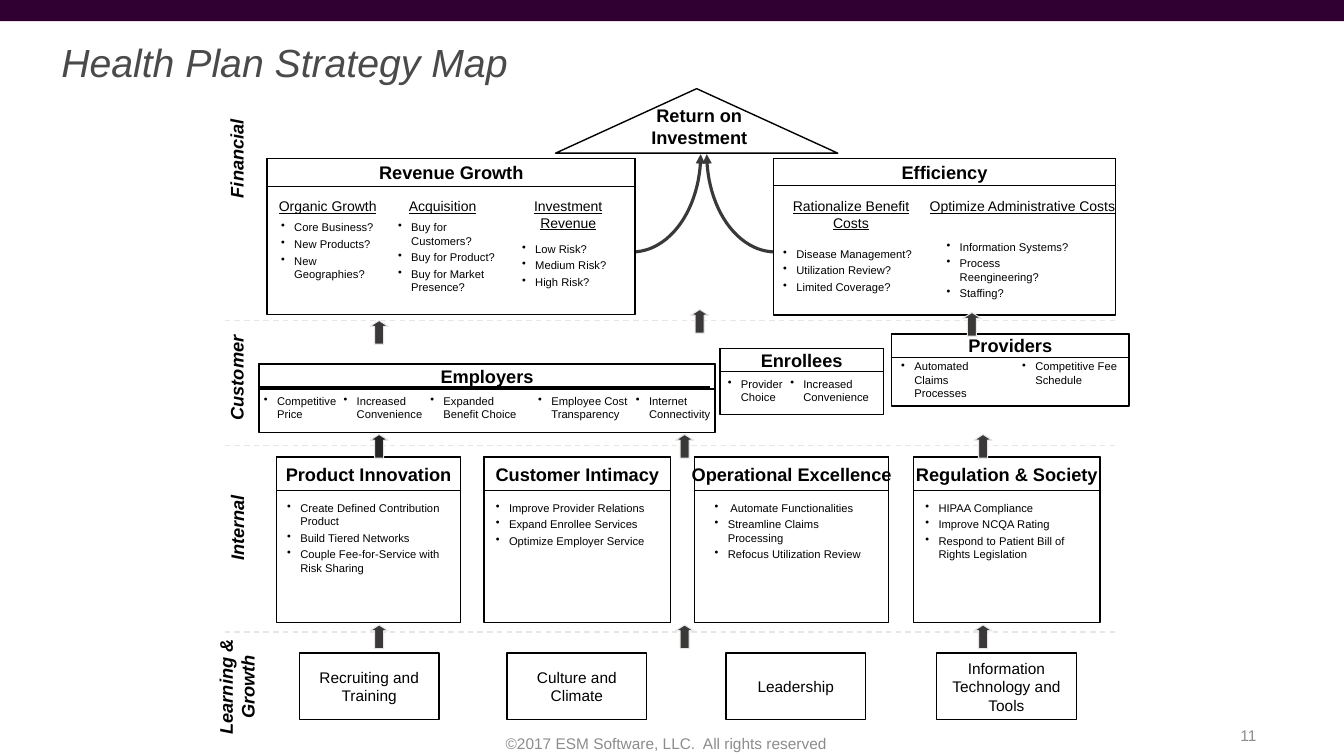
import math

from pptx import Presentation
from pptx import util as u
from pptx.dml.color import RGBColor
from pptx.enum import dml, shapes, text
from pptx.oxml.ns import qn

BLACK = RGBColor(0x00, 0x00, 0x00)
WHITE = RGBColor(0xFF, 0xFF, 0xFF)
PLUM = RGBColor(0x31, 0x00, 0x32)
SLATE = RGBColor(0x4A, 0x4A, 0x4A)
GREY = RGBColor(0x8C, 0x8C, 0x8C)
PALE = RGBColor(0xE7, 0xE6, 0xE6)
CHARCOAL = RGBColor(0x3B, 0x38, 0x38)
INK = RGBColor(0x26, 0x26, 0x26)

CELL = u.Inches(0.1)  # one column and one row of the grid
COLUMNS, ROWS = 133.3, 75
LEFT, CENTER, RIGHT = (text.PP_ALIGN.LEFT, text.PP_ALIGN.CENTER,
                       text.PP_ALIGN.RIGHT)
TOP, MIDDLE = text.MSO_ANCHOR.TOP, text.MSO_ANCHOR.MIDDLE
PRESET = shapes.MSO_SHAPE


def cells(*counts):
    return [u.Emu(round(count * CELL)) for count in counts]


class StrategyMap:
    """Draws on one page; every place is (column, row, width, height) in grid cells."""

    font = "Arial"

    def __init__(self, page):
        self.page = page

    def fill_text(self, frame, lines, size, color=BLACK, align=CENTER, anchor=TOP,
                  inset=(1, 0.5), wrap=True, bullet=False, spacing=None,
                  bold=False, italic=False, underline=False):
        frame.word_wrap = wrap
        frame.vertical_anchor = anchor
        frame.margin_left = frame.margin_right = cells(inset[0])[0]
        frame.margin_top = frame.margin_bottom = cells(inset[1])[0]
        for index, line in enumerate(lines):
            para = frame.add_paragraph() if index else frame.paragraphs[0]
            para.alignment = align
            if spacing:
                para.line_spacing = spacing
            if index:
                para.space_before = u.Pt(2.3)
            if bullet:
                properties = para._p.get_or_add_pPr()
                indent = cells(1.3)[0]
                properties.set("marL", str(indent))
                properties.set("indent", str(-indent))
                mark = properties.makeelement(qn("a:buChar"), {"char": "•"})
                properties.append(mark)
            span = para.add_run()
            span.text = line
            span.font.name, span.font.size = self.font, u.Pt(size)
            span.font.color.rgb = color
            span.font.bold, span.font.italic = bold, italic
            span.font.underline = underline

    def label(self, place, line, size, turn=0, **style):
        box = self.page.shapes.add_textbox(*cells(*place))
        box.rotation = turn
        self.fill_text(box.text_frame, [line], size, **style)

    def bullets(self, place, items):
        box = self.page.shapes.add_textbox(*cells(*place))
        self.fill_text(box.text_frame, items, 8, align=LEFT, bullet=True)

    def shape(self, preset, place, fill=None, line=BLACK, weight=1):
        shape = self.page.shapes.add_shape(preset, *cells(*place))
        self.finish(shape, fill, line, weight)
        return shape

    def finish(self, shape, fill, line, weight):
        shape.shadow.inherit = False
        if fill is None:
            shape.fill.background()
        else:
            shape.fill.solid()
            shape.fill.fore_color.rgb = fill
        if line is None:
            shape.line.fill.background()
        else:
            shape.line.color.rgb = line
            shape.line.width = u.Pt(weight)

    def box(self, place, line, size, wrap=True, bold=False):
        shape = self.shape(PRESET.RECTANGLE, place)
        self.fill_text(shape.text_frame, [line], size, anchor=MIDDLE,
                       inset=(0.7, 0.3), wrap=wrap, bold=bold)

    def panel(self, place, header, title):
        """A white frame with a title box of the given height on top."""
        self.shape(PRESET.RECTANGLE, place, WHITE)
        self.box((*place[:3], header), title, 13, wrap=False, bold=True)

    def rule(self, start, end, row, color=BLACK, dash=None):
        line = self.page.shapes.add_connector(
            shapes.MSO_CONNECTOR.STRAIGHT, *cells(start, row, end, row))
        line.line.color.rgb, line.line.width = color, u.Pt(1)
        line.line.dash_style = dash
        properties = line._element.spPr
        properties.append(properties.makeelement(qn("a:effectLst"), {}))

    def arrow(self, column, row, fill=CHARCOAL):
        arrow = self.shape(PRESET.UP_ARROW, (column, row, 1.8, 2.35),
                           fill, PALE, 0.75)
        arrow.adjustments[0], arrow.adjustments[1] = 0.5, 0.32

    def curve(self, column, row, reach, rise, steps=24):
        """Quarter ellipse that leaves sideways and ends in an upward arrowhead."""
        angles = [math.pi / 2 * step / steps for step in range(steps + 1)]
        points = [cells(column + reach * math.sin(angle),
                        row - rise * (1 - math.cos(angle))) for angle in angles]
        builder = self.page.shapes.build_freeform(*points[0])
        builder.add_line_segments(points[1:], close=False)
        curve = builder.convert_to_shape()
        self.finish(curve, None, CHARCOAL, 2.25)
        outline = curve.get_or_add_ln()
        outline.append(outline.makeelement(qn("a:tailEnd"), {"type": "triangle"}))


PERSPECTIVES = [
    ((18.1, 14.3, 10.7, 2.9), "Financial"),
    ((18.7, 35.9, 9.5, 3.2), "Customer"),
    ((19.3, 51, 8.4, 2.8), "Internal"),
    ((17.6, 65.6, 11.7, 5.1), "Learning & Growth"),
]
PANELS = [
    ((26.5, 15.7, 36.5, 15.5), 2.8, "Revenue Growth"),
    ((76.7, 15.75, 33.95, 15.5), 2.65, "Efficiency"),
    ((25.7, 36.1, 45.2, 6.8), 2.5, "Employers"),
    ((71.4, 34.55, 16.2, 6.55), 2.3, "Enrollees"),
    ((88.4, 33.15, 23.6, 7.15), 2.3, "Providers"),
    ((27.4, 45.35, 18.3, 16.4), 3.3, "Product Innovation"),
    ((48, 45.35, 18.5, 16.4), 3.3, "Customer Intimacy"),
    ((68.9, 45.35, 19.2, 16.4), 3.3, "Operational Excellence"),
    ((90.6, 45.35, 18.5, 16.4), 3.3, "Regulation & Society"),
]
SUBHEADS = [
    (26.6, 11.8, "Organic Growth"),
    (39.1, 9.6, "Acquisition"),
    (49.3, 14.1, "Investment Revenue"),
    (75.9, 17, "Rationalize Benefit Costs"),
    (90.7, 21.4, "Optimize Administrative Costs"),
]
LISTS = [
    ((26.9, 21.4, 12.4, 5.5), ["Core Business?", "New Products?", "New Geographies?"]),
    ((38.5, 21.4, 12.8, 6.7),
     ["Buy for Customers?", "Buy for Product?", "Buy for Market Presence?"]),
    ((50.8, 23.5, 11.3, 5.5), ["Low Risk?", "Medium Risk?", "High Risk?"]),
    ((76.7, 24, 15.4, 5.5),
     ["Disease Management?", "Utilization Review?", "Limited Coverage?"]),
    ((92.9, 23.3, 15.4, 5.5),
     ["Information Systems?", "Process Reengineering?", "Staffing?"]),
    ((25.2, 38.6, 9.6, 3.5), ["Competitive Price"]),
    ((33.1, 38.6, 10.1, 3.5), ["Increased Convenience"]),
    ((41.7, 38.6, 12, 3.5), ["Expanded Benefit Choice"]),
    ((52.4, 38.6, 12, 3.5), ["Employee Cost Transparency"]),
    ((62.1, 38.6, 12, 3.5), ["Internet Connectivity"]),
    ((71.2, 36.9, 9.4, 3.5), ["Provider Choice"]),
    ((77.4, 36.9, 12, 3.5), ["Increased Convenience"]),
    ((88.4, 35.2, 11.6, 3.5), ["Automated Claims Processes"]),
    ((100.4, 35.2, 12, 3.5), ["Competitive Fee Schedule"]),
    ((27.5, 49.2, 18.1, 8), ["Create Defined Contribution Product",
                             "Build Tiered Networks",
                             "Couple Fee-for-Service with Risk Sharing"]),
    ((48.2, 49.2, 18.1, 5.5), ["Improve Provider Relations",
                               "Expand Enrollee Services",
                               "Optimize Employer Service"]),
    ((69.9, 49.2, 18, 5.5), [" Automate Functionalities",
                             "Streamline Claims Processing",
                             "Refocus Utilization Review"]),
    ((90.8, 49.2, 18.1, 6.7), ["HIPAA Compliance", "Improve NCQA Rating",
                               "Respond to Patient Bill of Rights Legislation"]),
]
FOUNDATIONS = [(29.7, "Recruiting and Training"), (50.3, "Culture and Climate"),
               (72, "Leadership"), (92.9, "Information Technology and Tools")]
ARROWS = [(36.7, 31.8), (68.5, 30.7), (95.5, 31),
          (36.7, 43.1, INK), (67, 43.1), (96.6, 43.1),
          (36.7, 62), (67, 62), (96.6, 62)]


def main():
    deck = Presentation()
    deck.slide_width, deck.slide_height = cells(COLUMNS, ROWS)
    chart = StrategyMap(deck.slides.add_slide(deck.slide_layouts[6]))

    chart.shape(PRESET.RECTANGLE, (0, 0, COLUMNS, 2.1), PLUM, None)
    chart.label((5.1, 3.8, 92.5, 5), "Health Plan Strategy Map", 28, color=SLATE,
                align=LEFT, spacing=0.9, italic=True)
    for place, name in PERSPECTIVES:
        chart.label(place, name, 13, turn=270, anchor=MIDDLE, inset=(0, 0),
                    bold=True, italic=True)
    for row in (31.8, 44.2, 62.7):
        chart.rule(110.6, 22.2, row, PALE, dml.MSO_LINE.DASH)
    chart.curve(62.7, 25, 6.8, 9.7)
    chart.curve(76.9, 25, -6.8, 9.7)

    for panel in PANELS:
        chart.panel(*panel)
    chart.rule(25.7, 70.4, 38.4)
    for arrow in ARROWS:
        chart.arrow(*arrow)
    chart.shape(PRESET.ISOSCELES_TRIANGLE, (55.1, 8.8, 28, 6.4))
    chart.label((62, 9.9, 14.7, 5.1), "Return on Investment", 13, bold=True)
    for column, width, name in SUBHEADS:
        chart.label((column, 19.1, width, 2.6), name, 10, underline=True)
    for place, items in LISTS:
        chart.bullets(place, items)
    for column, name in FOUNDATIONS:
        chart.box((column, 64.8, 13.85, 6.6), name, 11)

    chart.label((43.6, 71.7, 45, 4), "©2017 ESM Software, LLC.  All rights reserved",
                11, color=GREY, anchor=MIDDLE)
    chart.label((95.6, 71, 30, 4), "11", 11, color=GREY, align=RIGHT, anchor=MIDDLE)
    deck.save("out.pptx")


if __name__ == "__main__":
    main()
